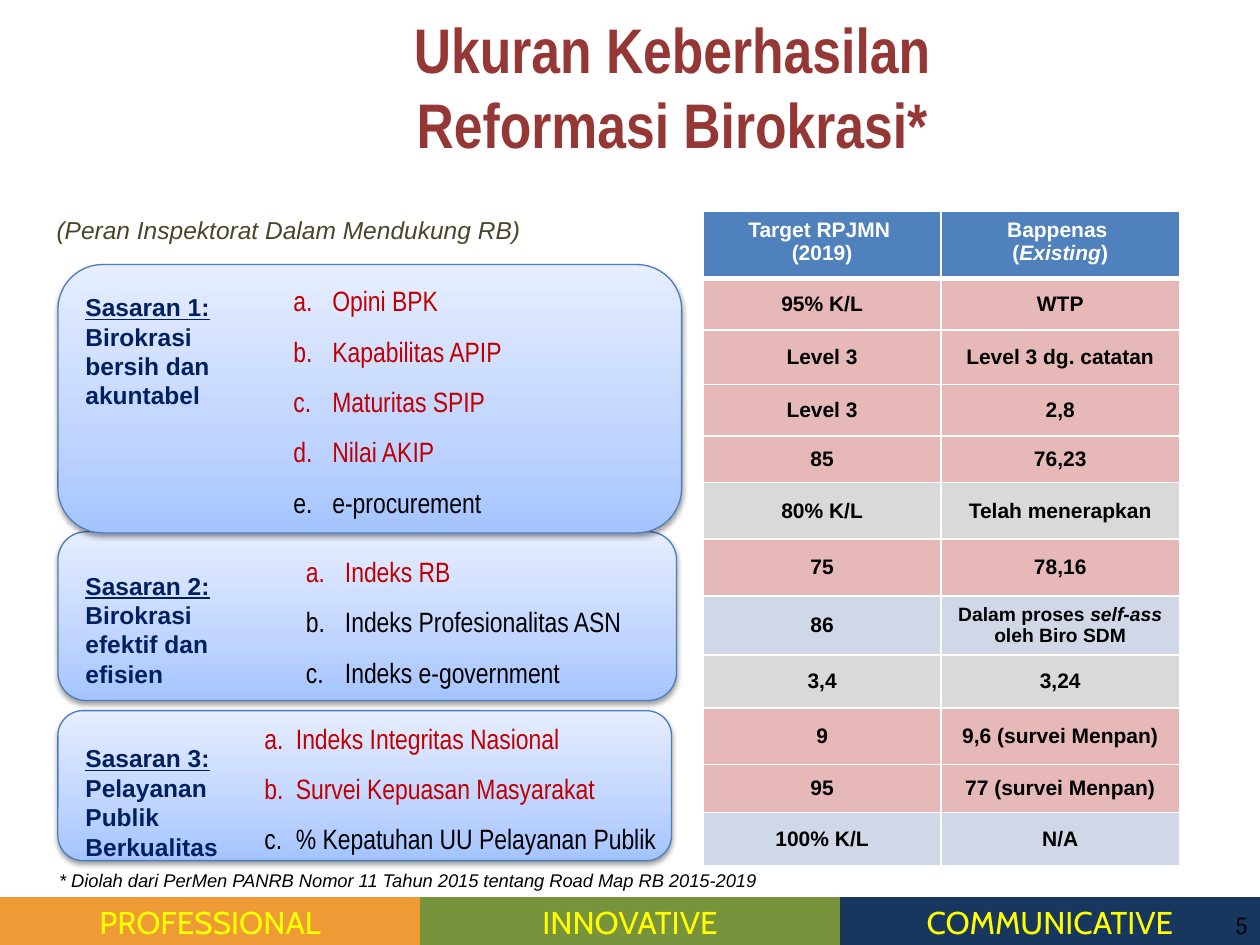
import pptx
import pptx.chart.data
import pptx.dml.color
import pptx.enum.shapes
import pptx.enum.text
import pptx.oxml
import pptx.oxml.ns
import pptx.util
from lxml import etree

Inches, Pt = pptx.util.Inches, pptx.util.Pt
RGBColor = pptx.dml.color.RGBColor
Align, Anchor = pptx.enum.text.PP_ALIGN, pptx.enum.text.MSO_ANCHOR
GROW = pptx.enum.text.MSO_AUTO_SIZE.SHAPE_TO_FIT_TEXT
qn = pptx.oxml.ns.qn
NS = 'xmlns:a="http://schemas.openxmlformats.org/drawingml/2006/main"'
PLAIN = "{2D5ABB26-0587-4C30-8999-92F81FD0307C}"

BLACK = RGBColor(0x00, 0x00, 0x00)
WHITE = RGBColor(0xFF, 0xFF, 0xFF)
YELLOW = RGBColor(0xFF, 0xFF, 0x00)
ORANGE = RGBColor(0xEF, 0x9B, 0x35)
GREEN = RGBColor(0x77, 0x93, 0x3C)
NAVY = RGBColor(0x17, 0x37, 0x5E)
MAROON = RGBColor(0x95, 0x37, 0x35)
RED = RGBColor(0xC0, 0x00, 0x00)
INK = RGBColor(0x00, 0x20, 0x60)
OLIVE = RGBColor(0x4A, 0x45, 0x2A)
EDGE = RGBColor(0x4B, 0x7E, 0xBC)
BLUE = RGBColor(0x4F, 0x81, 0xBD)
PINK = RGBColor(0xE6, 0xB9, 0xB8)
GREY = RGBColor(0xD9, 0xD9, 0xD9)
PALE = RGBColor(0xD0, 0xD8, 0xE8)


def put(para, text, look):
    """Add runs to a paragraph; parts between underscores are italic."""
    for n, part in enumerate(text.split("_")):
        if not part:
            continue
        run = para.add_run()
        run.text = part
        for key, value in look.items():
            if key == "color":
                run.font.color.rgb = value
            else:
                setattr(run.font, key, value)
        if n % 2:
            run.font.italic = True


def write(frame, lines, look, align=Align.LEFT):
    """Write (text, extra format) lines as the paragraphs of a frame."""
    frame.word_wrap = True
    for n, (text, extra) in enumerate(lines):
        para = frame.add_paragraph() if n else frame.paragraphs[0]
        para.alignment = align
        put(para, text, {**look, **extra})


deck = pptx.Presentation()
deck.slide_width, deck.slide_height = Inches(10), Inches(7.5)
slide = deck.slides.add_slide(deck.slide_layouts[5])
shapes = slide.shapes

# Title
title = shapes.title
title.left, title.top = Inches(2.14), Inches(0.13)
title.width, title.height = Inches(6.39), Inches(1.1)
title.text_frame.vertical_anchor = Anchor.MIDDLE
head = title.text_frame.paragraphs[0]
head.alignment = Align.CENTER
look = {"size": Pt(36), "name": "Arial Narrow", "bold": True, "color": MAROON}
put(head, "Ukuran Keberhasilan", look)
head.add_line_break()
put(head, "Reformasi Birokrasi*", look)

# Footer band
band = shapes.add_table(1, 3, Inches(0), Inches(7.12), Inches(10), Inches(0.41)).table
band.first_row = band.horz_banding = False
band._tbl.tblPr.find(qn("a:tableStyleId")).text = PLAIN
look = {"size": Pt(18), "name": "Cabin", "color": YELLOW}
words = [("PROFESSIONAL", ORANGE), ("INNOVATIVE", GREEN), ("COMMUNICATIVE", NAVY)]
for cell, (word, color) in zip(band.rows[0].cells, words):
    cell.vertical_anchor = Anchor.MIDDLE
    cell.fill.solid()
    cell.fill.fore_color.rgb = color
    write(cell.text_frame, [(word, {})], look, Align.CENTER)

# Goal panels
GRAD = f"""<a:gradFill {NS} rotWithShape="1"><a:gsLst>
<a:gs pos="0"><a:srgbClr val="A4C4FF"/></a:gs>
<a:gs pos="35000"><a:srgbClr val="BFD4FF"/></a:gs>
<a:gs pos="100000"><a:srgbClr val="E6EEFF"/></a:gs>
</a:gsLst><a:lin ang="16200000" scaled="1"/></a:gradFill>"""
SHADE = f"""<a:effectLst {NS}><a:outerShdw blurRad="40000" dist="20000" dir="5400000"
rotWithShape="0"><a:srgbClr val="000000"><a:alpha val="38000"/></a:srgbClr>
</a:outerShdw></a:effectLst>"""
for top, width, height in [(5.64, 4.87, 1.19), (4.22, 4.91, 1.34), (2.1, 4.95, 2.13)]:
    panel = shapes.add_shape(pptx.enum.shapes.MSO_SHAPE.ROUNDED_RECTANGLE,
                             Inches(0.46), Inches(top), Inches(width), Inches(height))
    props = panel._element.spPr
    props.append(pptx.oxml.parse_xml(GRAD))
    panel.line.color.rgb = EDGE
    panel.line.width = Pt(0.75)
    props.append(pptx.oxml.parse_xml(SHADE))

# Lettered measures: box, indent, tab stop, lines
red = {"color": RED}
lists = [
    ((2.23, 2.07, 2.12, 2.07), 0.31, 0.25,
     [("Opini BPK", red), ("Kapabilitas APIP", red), ("Maturitas SPIP", red),
      ("Nilai AKIP", red), ("e-procurement", {})]),
    ((2.33, 4.22, 2.87, 1.34), 0.31, 0.31,
     [("Indeks RB", red), ("Indeks Profesionalitas ASN", {}),
      ("Indeks e-government", {})]),
    ((2, 5.54, 3.35, 1.31), 0.25, None,
     [("Indeks Integritas Nasional", red), ("Survei Kepuasan Masyarakat", red),
      ("% Kepatuhan UU Pelayanan Publik", {})]),
]
look = {"size": Pt(16), "name": "Arial Narrow", "color": BLACK}
for place, dent, tab, lines in lists:
    frame = shapes.add_textbox(*map(Inches, place)).text_frame
    frame.auto_size = GROW
    write(frame, lines, look)
    for para in frame.paragraphs:
        para.line_spacing = 1.5
        props = para._p.get_or_add_pPr()
        props.set("marL", str(Inches(dent)))
        props.set("indent", str(-Inches(dent)))
        etree.SubElement(props, qn("a:buAutoNum"), type="alphaLcPeriod")
        if tab:
            stops = etree.SubElement(props, qn("a:tabLst"))
            etree.SubElement(stops, qn("a:tab"), pos=str(Inches(tab)), algn="l")

# Goal labels, subtitle, footnote and page number
goal = {"size": Pt(14), "name": "Arial", "bold": True, "color": INK}
under = {"underline": True}
notes = [
    ((0.58, 2.27, 1.66, 1.04), goal,
     [("Sasaran 1:", under), ("Birokrasi bersih dan akuntabel", {})]),
    ((0.58, 4.48, 1.66, 1.04), goal,
     [("Sasaran 2:", under), ("Birokrasi efektif dan efisien", {})]),
    ((0.58, 5.85, 1.36, 1.06), goal,
     [("Sasaran 3:", under), ("Pelayanan Publik Berkualitas", {})]),
    ((0.35, 1.66, 4.92, 0.34),
     {"size": Pt(14), "name": "Arial", "italic": True, "color": OLIVE},
     [("(Peran Inspektorat Dalam Mendukung RB)", {})]),
    ((0.37, 6.85, 6.92, 0.29),
     {"size": Pt(10.5), "name": "Arial", "italic": True, "color": BLACK},
     [("* Diolah dari PerMen PANRB Nomor 11 Tahun 2015 tentang Road Map RB 2015-2019", {})]),
]
for place, look, lines in notes:
    frame = shapes.add_textbox(*map(Inches, place)).text_frame
    frame.auto_size = GROW
    write(frame, lines, look)
frame = shapes.add_textbox(Inches(7.83), Inches(7.14), Inches(2.17), Inches(0.4)).text_frame
frame.vertical_anchor = Anchor.MIDDLE
write(frame, [("5", {})], {"size": Pt(14), "name": "Cambria", "color": BLACK}, Align.RIGHT)

# Target table: row height, fill, target, existing
small = {"size": Pt(11)}
rows = [
    (0.53, BLUE, [("Target RPJMN ", {}), ("(2019)", {})],
     [("Bappenas ", {}), ("(_Existing_)", {})]),
    (0.41, PINK, [("95% K/L", {})], [("WTP", {})]),
    (0.43, PINK, [("Level 3", {})], [("Level 3 dg. catatan", {})]),
    (0.41, PINK, [("Level 3", {})], [("2,8", {})]),
    (0.37, PINK, [("85", {})], [("76,23", {})]),
    (0.45, GREY, [("80% K/L", {})], [("Telah menerapkan", {})]),
    (0.45, PINK, [("75", {})], [("78,16", {})]),
    (0.47, PALE, [("86", {})],
     [("Dalam proses _self-ass_", small), ("oleh Biro SDM", small)]),
    (0.42, GREY, [("3,4", {})], [("3,24", {})]),
    (0.45, PINK, [("9", {})], [("9,6 (survei Menpan)", {})]),
    (0.38, PINK, [("95", {})], [("77 (survei Menpan)", {})]),
    (0.42, PALE, [("100% K/L", {})], [("N/A", {})]),
]
grid = shapes.add_table(len(rows), 2, Inches(5.58), Inches(1.68),
                        Inches(3.78), Inches(5.18)).table
grid.first_row = grid.horz_banding = False
grid._tbl.tblPr.find(qn("a:tableStyleId")).text = PLAIN
for n, (height, color, *texts) in enumerate(rows):
    grid.rows[n].height = Inches(height)
    look = {"size": Pt(12), "name": "Arial", "bold": True, "color": BLACK if n else WHITE}
    for cell, lines in zip(grid.rows[n].cells, texts):
        cell.margin_left = cell.margin_right = Inches(0.09)
        cell.vertical_anchor = Anchor.MIDDLE if n else Anchor.TOP
        for side in "LRTB":
            thick = (n, side) in [(0, "B"), (1, "T")]
            line = etree.SubElement(cell._tc.get_or_add_tcPr(), qn("a:ln" + side),
                                    w=str(Pt(3 if thick else 1)))
            ink = etree.SubElement(line, qn("a:solidFill"))
            etree.SubElement(ink, qn("a:srgbClr"), val=str(WHITE))
        cell.fill.solid()
        cell.fill.fore_color.rgb = color
        write(cell.text_frame, lines, look, Align.CENTER)

deck.save("out.pptx")
